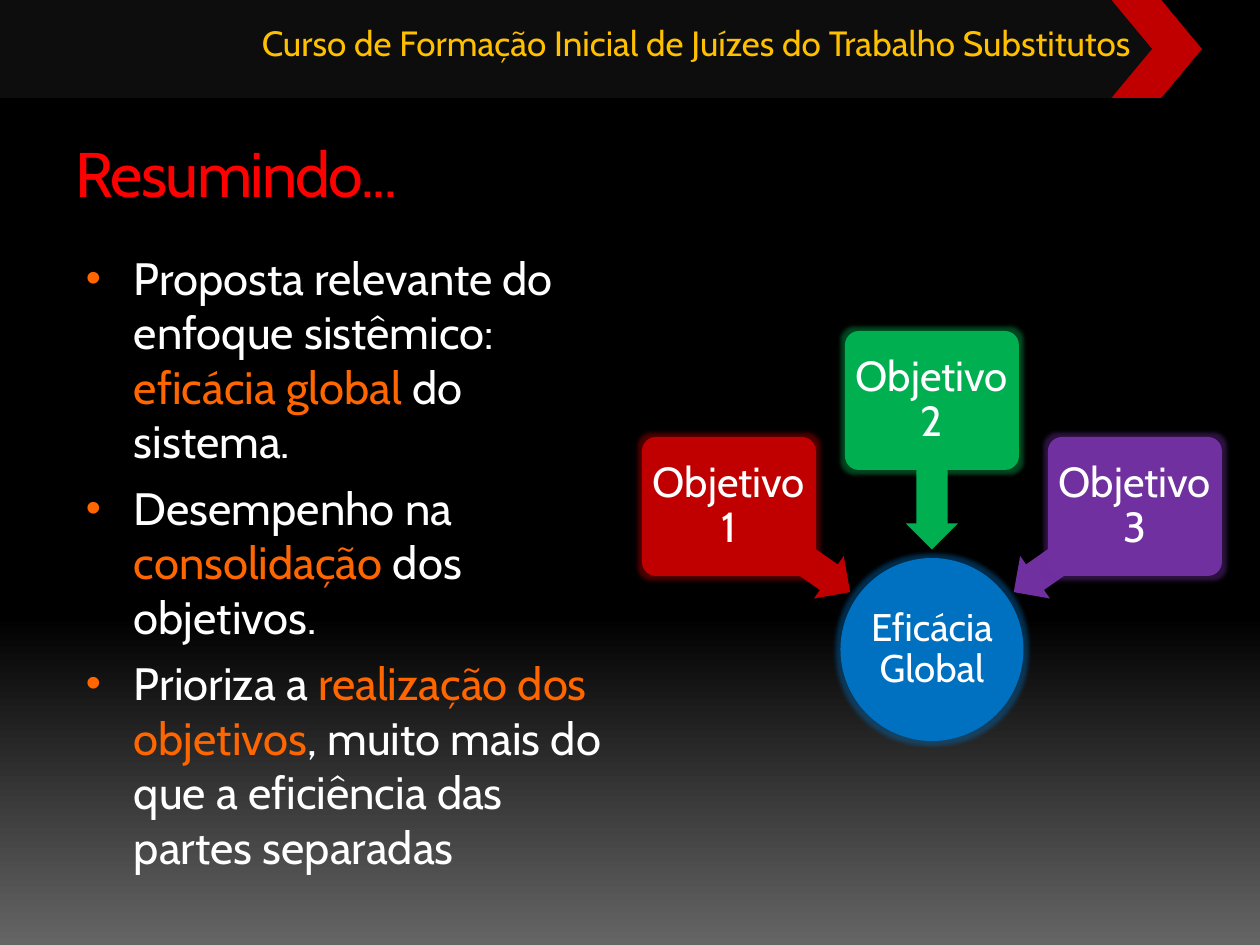
"""Build the summary slide on objectives and global efficacy."""
from lxml import etree
from pptx import Presentation
from pptx.dml.color import RGBColor
from pptx.enum.shapes import MSO_SHAPE
from pptx.enum.text import MSO_ANCHOR, PP_ALIGN
from pptx.oxml.ns import qn
from pptx.util import Emu, Pt

PLATE, ROUND = MSO_SHAPE.PENTAGON, MSO_SHAPE.ROUNDED_RECTANGLE
OVAL, ARROW = MSO_SHAPE.OVAL, MSO_SHAPE.LEFT_ARROW
LEFT, MID, RIGHT = PP_ALIGN.LEFT, PP_ALIGN.CENTER, PP_ALIGN.RIGHT
TOP, CENTER, BOTTOM = MSO_ANCHOR.TOP, MSO_ANCHOR.MIDDLE, MSO_ANCHOR.BOTTOM

FONT = "Cabin"
HEX = {
    "black": "000000", "gray": "656565", "bar": "0D0D0D", "white": "FFFFFF",
    "gold": "FFC000", "title": "FF0000", "orange": "FF6600", "red": "C00000",
    "green": "00B050", "purple": "7030A0", "blue": "0070C0",
}
HEADER = "Curso de Formação Inicial de Juízes do Trabalho Substitutos"
TITLE = "Resumindo..."
POINTS = [
    [("Proposta relevante do enfoque sistêmico: ", "white"),
     ("eficácia global ", "orange"), ("do sistema.", "white")],
    [("Desempenho na ", "white"), ("consolidação", "orange"),
     (" dos objetivos.", "white")],
    [("Prioriza a ", "white"), ("realização dos objetivos", "orange"),
     (", muito mais do que a eficiência das partes separadas", "white")],
]
GOAL = "Eficácia Global"
AIMS = [
    ("Objetivo 1", "red", -1, 437, 550, 215),
    ("Objetivo 2", "green", 0, 331, 476, 270),
    ("Objetivo 3", "purple", 1, 437, 550, 325),
]
AXIS, STEP, REACH = 932, 203, 142
BOX_W, BOX_H, ARROW_W, ARROW_H, DISC = 174, 139, 147, 52, 183


def px(n):
    return Emu(round(n * 914400 / 126))


def rgb(name):
    return RGBColor.from_string(HEX[name])


def add_shape(slide, kind, box, color, adj=(), glow=False):
    shape = slide.shapes.add_shape(kind, *map(px, box))
    shape.shadow.inherit = False
    shape.fill.solid()
    shape.fill.fore_color.rgb = rgb(color)
    shape.line.fill.background()
    for i, value in enumerate(adj):
        shape.adjustments[i] = value
    if glow:
        effects = shape._element.spPr.find(qn("a:effectLst"))
        halo = etree.SubElement(effects, qn("a:glow"), rad=str(Pt(5)))
        tint = etree.SubElement(halo, qn("a:srgbClr"), val=HEX[color])
        etree.SubElement(tint, qn("a:alpha"), val="40000")
    return shape


def set_frame(shape, insets, anchor):
    frame = shape.text_frame
    frame.word_wrap = True
    frame.vertical_anchor = anchor
    (frame.margin_left, frame.margin_top,
     frame.margin_right, frame.margin_bottom) = map(px, insets)
    return frame


def write(para, parts, size, align):
    para.alignment = align
    for text, color in parts:
        run = para.add_run()
        run.text = text
        run.font.name, run.font.size = FONT, Pt(size)
        run.font.color.rgb = rgb(color)


def add_text(slide, box, insets, anchor, parts, size, align):
    shape = slide.shapes.add_textbox(*map(px, box))
    para = set_frame(shape, insets, anchor).paragraphs[0]
    write(para, parts, size, align)
    return para


def label(shape, text, size, inset):
    para = set_frame(shape, [inset] * 4, CENTER).paragraphs[0]
    para.line_spacing = 0.9
    write(para, [(text, "white")], size, MID)


def add_bullet(para):
    props = para._p.get_or_add_pPr()
    props.set("marL", str(px(57)))
    props.set("indent", str(-px(48)))
    tint = etree.SubElement(props, qn("a:buClr"))
    etree.SubElement(tint, qn("a:srgbClr"), val=HEX["orange"])
    etree.SubElement(props, qn("a:buSzPct"), val="95000")
    etree.SubElement(props, qn("a:buFont"), typeface="Arial")
    etree.SubElement(props, qn("a:buChar"), char="•")


def add_points(slide):
    shape = slide.shapes.add_textbox(*map(px, (64, 244, 557, 624)))
    frame = set_frame(shape, (13, 6, 13, 6), TOP)
    for i, parts in enumerate(POINTS):
        para = frame.add_paragraph() if i else frame.paragraphs[0]
        add_bullet(para)
        para.space_before = Pt(7 if i else 0)
        write(para, parts, 25.9, LEFT)


def add_diagram(slide):
    disc = add_shape(slide, OVAL, (AXIS - DISC / 2, 558, DISC, DISC),
                     "blue", glow=True)
    label(disc, GOAL, 22, 2)
    for text, color, side, top, mid, turn in AIMS:
        left = AXIS + side * REACH - ARROW_W / 2
        arrow = add_shape(slide, ARROW,
                          (left, mid - ARROW_H / 2, ARROW_W, ARROW_H),
                          color, (0.6, 0.5))
        arrow.rotation = turn
        left = AXIS + side * STEP - BOX_W / 2
        card = add_shape(slide, ROUND, (left, top, BOX_W, BOX_H),
                         color, (0.1,), glow=True)
        label(card, text, 24, 3)


def main():
    deck = Presentation()
    deck.slide_width, deck.slide_height = px(1260), px(945)
    slide = deck.slides.add_slide(deck.slide_layouts[6])
    fill = slide.background.fill
    fill.gradient()
    fill.gradient_angle = 270
    for stop, spot, name in zip(fill.gradient_stops, (0.65, 1), ("black", "gray")):
        stop.position = spot
        stop.color.rgb = rgb(name)

    add_shape(slide, PLATE, (79, 0, 1123, 98), "red", (0.415,))
    add_shape(slide, PLATE, (0, 0, 1152, 98), "bar", (0.415,))
    add_text(slide, (207, 15, 924, 55), (13, 6, 0, 6), TOP,
             [(HEADER, "gold")], 20, RIGHT)
    title = add_text(slide, (63, 118, 1134, 98), (13, 6, 13, 6), BOTTOM,
                     [(TITLE, "title")], 36, LEFT)
    title.runs[0].font._element.set("spc", "-100")
    add_points(slide)
    add_diagram(slide)
    deck.save("out.pptx")


if __name__ == "__main__":
    main()
